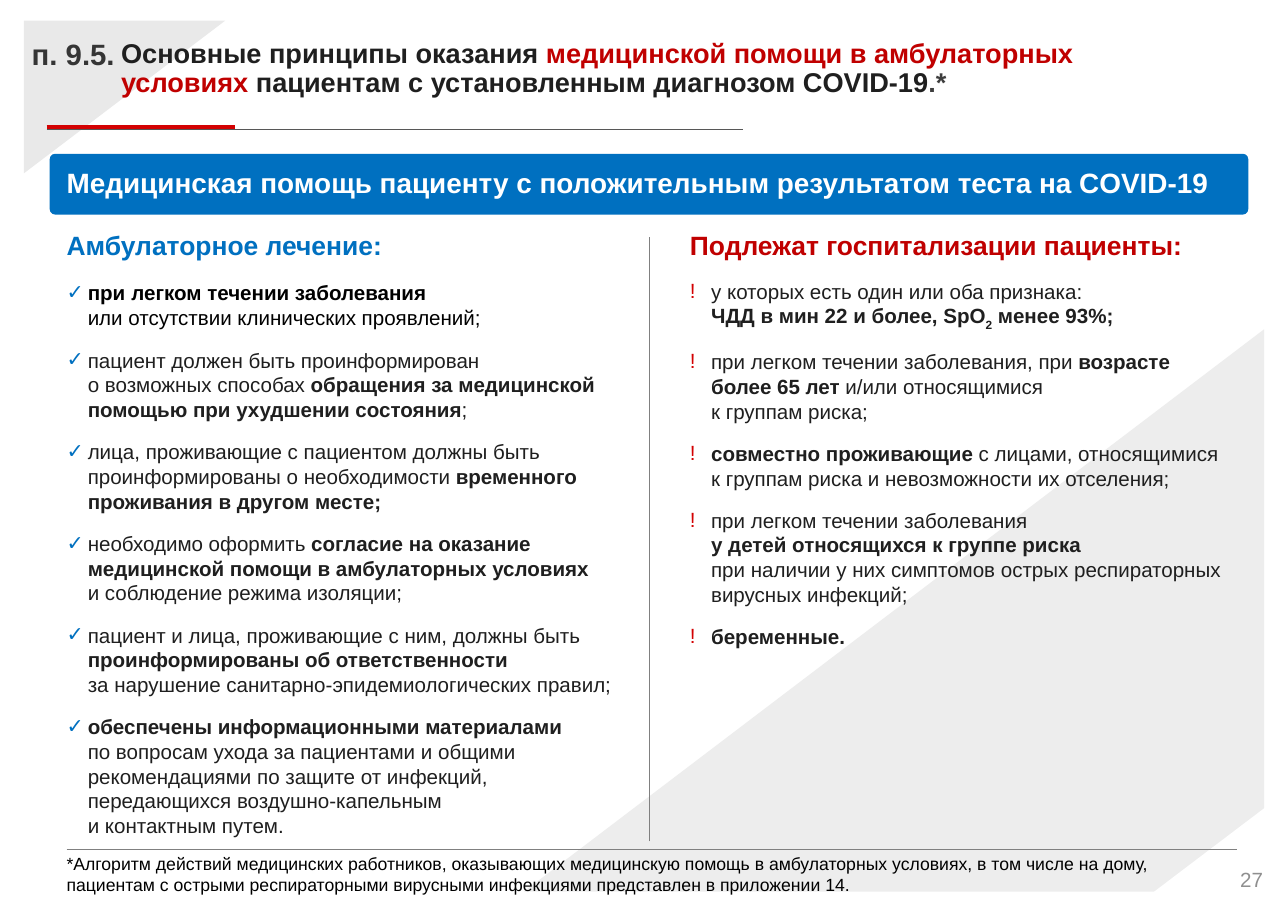
from dataclasses import dataclass

from lxml import etree
from pptx import Presentation
from pptx.dml.color import RGBColor
from pptx.enum.shapes import MSO_CONNECTOR, MSO_SHAPE
from pptx.enum.text import MSO_ANCHOR, MSO_AUTO_SIZE, PP_ALIGN
from pptx.oxml.ns import qn
from pptx.util import Inches, Pt

TRIANGLE, ROUNDED = MSO_SHAPE.RIGHT_TRIANGLE, MSO_SHAPE.ROUNDED_RECTANGLE
STRAIGHT = MSO_CONNECTOR.STRAIGHT
TOP, MIDDLE = MSO_ANCHOR.TOP, MSO_ANCHOR.MIDDLE
LEFT, RIGHT = PP_ALIGN.LEFT, PP_ALIGN.RIGHT
FIXED = MSO_AUTO_SIZE.NONE
TWO_CONTENT = 3
POINTS_PER_INCH = 72


@dataclass(frozen=True)
class Theme:
    font: str = "Arial"
    white: str = "FFFFFF"
    black: str = "000000"
    ink: str = "1F1F1F"
    section_ink: str = "353535"
    star_ink: str = "3E3E3E"
    page_ink: str = "8F8F8F"
    blue: str = "0070C0"
    red: str = "C00000"
    accent: str = "D30102"
    rule: str = "808080"
    title_rule: str = "575757"
    large_corner: str = "EDEDED"
    small_corner: str = "E9E9E9"
    section_size: int = 40
    banner_size: int = 38
    title_size: int = 37
    heading_size: int = 36
    wide_space_size: int = 30
    body_size: int = 28
    note_size: int = 24


THEME = Theme()


@dataclass(frozen=True)
class Span:
    text: str
    bold: bool = False
    color: str = THEME.ink
    size: int = THEME.body_size
    baseline: int = 0


def bold(text, color=THEME.ink, size=THEME.body_size, baseline=0):
    return Span(text, True, color, size, baseline)


OUTPATIENT = [
    [bold("при", THEME.black), bold(" ", THEME.black, THEME.wide_space_size),
     bold("легком течении заболевания\n", THEME.black),
     Span("или отсутствии клинических проявлений;", color=THEME.black)],
    [Span("пациент должен быть проинформирован\nо возможных способах "),
     bold("обращения за медицинской помощью при ухудшении состояния"), Span(";")],
    [Span("лица, проживающие с пациентом должны быть проинформированы о необходимости "),
     bold("временного проживания в другом месте;")],
    [Span("необходимо оформить "),
     bold("согласие на оказание медицинской помощи в амбулаторных условиях\n"),
     Span("и соблюдение режима изоляции;")],
    [Span("пациент и лица, проживающие с ним, должны быть "),
     bold("проинформированы об ответственности\n"),
     Span("за нарушение санитарно-эпидемиологических правил;")],
    [bold("обеспечены информационными материалами\n"),
     Span("по вопросам ухода за пациентами и общими рекомендациями по защите от инфекций, "
          "передающихся воздушно-капельным\nи контактным путем.")],
]
HOSPITAL = [
    [Span("у которых есть один или оба признака:\n"),
     bold("ЧДД в мин 22 и более, SpO"), bold("2", baseline=-25000), bold(" менее 93%;")],
    [Span("при легком течении заболевания, при "), bold("возрасте\nболее 65 лет "),
     Span("и/или относящимися\nк группам риска;")],
    [bold("совместно проживающие"),
     Span(" с лицами, относящимися к группам риска и невозможности их отселения;")],
    [Span("при легком течении заболевания\n"), bold("у детей относящихся к группе риска\n"),
     Span("при наличии у них симптомов острых респираторных вирусных инфекций;")],
    [bold("беременные.")],
]


def rgb(color):
    return RGBColor.from_string(color)


def place(shape, left, top, width, height):
    shape.left, shape.top = Inches(left), Inches(top)
    shape.width, shape.height = Inches(width), Inches(height)


def write_spans(para, spans):
    """Add formatted runs; a newline in a span becomes a line break."""
    for span in spans:
        for index, line in enumerate(span.text.split("\n")):
            if index:
                para.add_line_break()
            if not line:
                continue
            run = para.add_run()
            run.text = line
            run.font.name, run.font.size = THEME.font, Pt(span.size)
            run.font.bold = span.bold
            run.font.color.rgb = rgb(span.color)
            if span.baseline:
                run._r.get_or_add_rPr().set("baseline", str(span.baseline))


def fill_frame(frame, spans, align=LEFT, anchor=TOP, inset=(0, 0), spacing=None):
    """Write one paragraph; inset is the horizontal and vertical margin in inches."""
    frame.word_wrap, frame.auto_size = True, FIXED
    frame.vertical_anchor = anchor
    frame.margin_left = frame.margin_right = Inches(inset[0])
    frame.margin_top = frame.margin_bottom = Inches(inset[1])
    para = frame.paragraphs[0]
    para.alignment, para.line_spacing = align, spacing
    write_spans(para, spans)


def add_text(page, at, spans, **layout):
    box = page.shapes.add_textbox(*map(Inches, at))
    fill_frame(box.text_frame, spans, **layout)


def add_filled(page, kind, at, color):
    shape = page.shapes.add_shape(kind, *map(Inches, at))
    shape.shadow.inherit = False
    shape.fill.solid()
    shape.fill.fore_color.rgb = rgb(color)
    shape.line.fill.background()
    return shape


def add_corner(page, at, rotation, color, layer):
    """Add a rotated triangle behind the text, at the given depth."""
    corner = add_filled(page, TRIANGLE, at, color)
    corner.rotation = rotation
    page.shapes._spTree.insert(2 + layer, corner._element)


def add_rule(page, start, end, color, width):
    rule = page.shapes.add_connector(STRAIGHT, *map(Inches, start + end))
    rule.line.color.rgb, rule.line.width = rgb(color), Pt(width)
    etree.SubElement(rule._element.spPr, qn("a:effectLst"))


def set_bullet(para, mark=None, color=None):
    """Give the paragraph a coloured mark, or none at all."""
    props = para._p.get_or_add_pPr()
    indent = Inches(0.4) if mark else 0
    props.set("marL", str(indent))
    props.set("indent", str(-indent))
    if not mark:
        etree.SubElement(props, qn("a:buNone"))
        return
    tint = etree.SubElement(props, qn("a:buClr"))
    etree.SubElement(tint, qn("a:srgbClr"), val=color)
    etree.SubElement(props, qn("a:buFont"), typeface=THEME.font)
    etree.SubElement(props, qn("a:buChar"), char=mark)


def fill_list(body, at, heading, heading_color, items, mark, mark_color):
    place(body, *at)
    frame = body.text_frame
    frame.word_wrap, frame.auto_size = True, FIXED
    title = [bold(heading, heading_color, THEME.heading_size)]
    for index, spans in enumerate([title] + items):
        para = frame.add_paragraph() if index else frame.paragraphs[0]
        para.space_before, para.space_after = Pt(0), Pt(24)
        set_bullet(para, mark if index else None, mark_color)
        write_spans(para, spans)


def main():
    deck = Presentation()
    deck.slide_width = Inches(1754 / POINTS_PER_INCH)
    deck.slide_height = Inches(1241 / POINTS_PER_INCH)
    page = deck.slides.add_slide(deck.slide_layouts[TWO_CONTENT])
    title, outpatient, hospital = page.placeholders

    corners = [((11.59, 4.55, 10.64, 14), 270, THEME.large_corner),
               ((0.91, -0.07, 2.89, 3.81), 90, THEME.small_corner),
               ((21.77, 14.6, 2.23, 2.94), 270, THEME.white)]
    for layer, corner in enumerate(corners):
        add_corner(page, *corner, layer)

    place(title, 2.29, 0.75, 19.67, 1.15)
    title_parts = [("Основные принципы оказания ", THEME.ink),
                   ("медицинской помощи в амбулаторных условиях ", THEME.red),
                   ("пациентам с установленным диагнозом COVID-19", THEME.ink),
                   (".*", THEME.star_ink)]
    fill_frame(title.text_frame, [bold(*part, THEME.title_size) for part in title_parts],
               spacing=0.9)
    add_text(page, (0.6, 0.76, 2, 0.61),
             [bold("п. 9.5.", THEME.section_ink, THEME.section_size)], spacing=0.9)

    banner = add_filled(page, ROUNDED, (0.94, 2.91, 22.67, 1.15), THEME.blue)
    banner.adjustments[0] = 0.09
    banner_text = "Медицинская помощь пациенту с положительным результатом теста на COVID-19"
    fill_frame(banner.text_frame, [bold(banner_text, THEME.white, THEME.banner_size)],
               anchor=MIDDLE, inset=(0.29, 0), spacing=0.9)

    fill_list(outpatient, (1.16, 4.29, 10.88, 12.55), "Амбулаторное лечение:",
              THEME.blue, OUTPATIENT, "✓", THEME.blue)
    fill_list(hospital, (12.95, 4.29, 10.24, 8.04), "Подлежат госпитализации пациенты:",
              THEME.red, HOSPITAL, "!", THEME.accent)

    add_rule(page, (1.26, 16.07), (23.4, 16.07), THEME.rule, 1)
    add_rule(page, (12.29, 15.92), (12.29, 4.48), THEME.rule, 1)
    add_rule(page, (0.88, 2.45), (14.05, 2.45), THEME.title_rule, 1.5)
    add_rule(page, (0.88, 2.4), (4.45, 2.4), THEME.accent, 5.75)

    note = ("*Алгоритм действий медицинских работников, оказывающих медицинскую помощь "
            "в амбулаторных условиях, в том числе на дому, пациентам с острыми "
            "респираторными вирусными инфекциями представлен в приложении 14.")
    add_text(page, (1.16, 16.08, 20.87, 0.91),
             [Span(note, color=THEME.black, size=THEME.note_size)], inset=(0.1, 0.05))
    add_text(page, (22.89, 16.4, 1, 0.47), [Span("27", color=THEME.page_ink)], align=RIGHT)
    deck.save("out.pptx")


if __name__ == "__main__":
    main()
